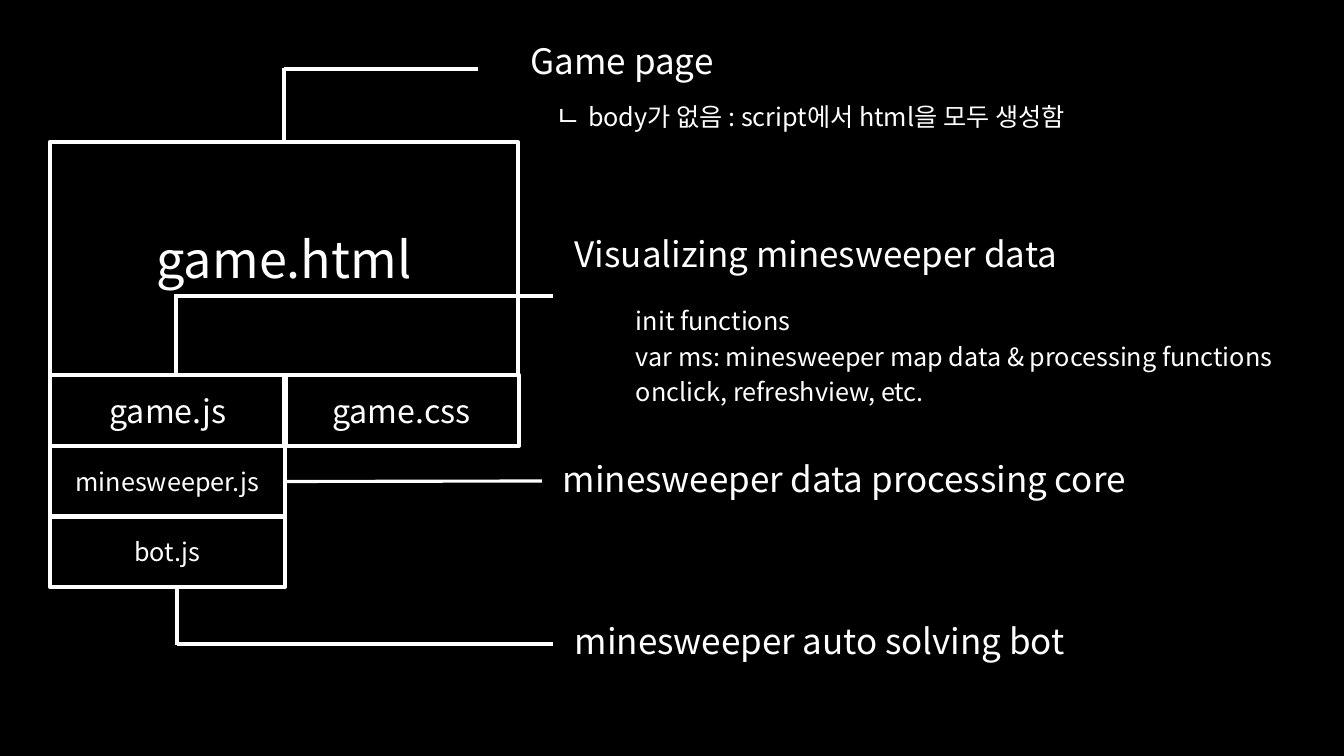
from lxml import etree
from pptx import Presentation
from pptx.dml.color import RGBColor
from pptx.enum.shapes import MSO_CONNECTOR, MSO_SHAPE
from pptx.enum.text import MSO_ANCHOR, PP_ALIGN
from pptx.oxml.ns import qn
from pptx.util import Pt

RECT = MSO_SHAPE.RECTANGLE
STRAIGHT = MSO_CONNECTOR.STRAIGHT
TOP, MIDDLE = MSO_ANCHOR.TOP, MSO_ANCHOR.MIDDLE
LEFT, CENTER = PP_ALIGN.LEFT, PP_ALIGN.CENTER

FONT = "Noto Sans CJK KR"
COLORS = {"background": "000000", "ink": "FFFFFF"}
EMU_PER_PX = 914400 / 100.8
TOP_SIDE, RIGHT_SIDE = 0, 3

# File boxes: left, top, width, height, text size
FILES = {
    "game.html": (50, 142, 468, 233, 36),
    "game.js": (50, 375, 236, 71, 23),
    "game.css": (284, 375, 235, 71, 23),
    "minesweeper.js": (50, 446, 235, 71, 18),
    "bot.js": (50, 516, 235, 71, 18),
}

# Headings: text, left, top, width, height
HEADINGS = [
    ("Visualizing minesweeper data", 565, 228, 522, 52),
    ("minesweeper data processing core", 553, 453, 611, 52),
    ("minesweeper auto solving bot", 565, 615, 528, 52),
]

# Leader lines: x1, y1, x2, y2, joined file, joined side
LEADERS = [
    (284, 142, 284, 68, "game.html", TOP_SIDE),
    (284, 69, 478, 69, None, None),
    (176, 375, 176, 294, None, None),
    (176, 296, 553, 296, None, None),
    (285, 481, 542, 481, "minesweeper.js", RIGHT_SIDE),
    (177, 587, 177, 645, None, None),
    (177, 644, 553, 644, None, None),
]

DETAILS = [
    "init functions",
    "var ms: minesweeper map data & processing functions",
    "onclick, refreshview, etc.",
]


def px(n):
    return round(n * EMU_PER_PX)


def color(name):
    return RGBColor.from_string(COLORS[name])


def add_run(p, text, size):
    r = p.add_run()
    r.text = text
    r.font.size = Pt(size)
    r.font.name = FONT
    r.font.color.rgb = color("ink")
    # The Korean letters take the same font
    etree.SubElement(r.font._element, qn("a:ea")).set("typeface", FONT)


def write(sp, paragraphs, align=LEFT, anchor=TOP, spacing=None, before=0, indent=0):
    """Fill a shape; each paragraph is a list of (text, size) runs."""
    tf = sp.text_frame
    tf.word_wrap = True
    tf.vertical_anchor = anchor
    for i, runs in enumerate(paragraphs):
        p = tf.add_paragraph() if i else tf.paragraphs[0]
        p.alignment = align
        p.line_spacing = spacing
        p.space_before = Pt(before)
        if i and indent:
            p._p.get_or_add_pPr().set("indent", str(px(indent)))
        for text, size in runs:
            add_run(p, text, size)


def add_file(s, name, x, y, w, h, size):
    sp = s.shapes.add_shape(RECT, px(x), px(y), px(w), px(h))
    sp.shadow.inherit = False
    sp.fill.background()
    sp.line.color.rgb = color("ink")
    sp.line.width = Pt(3)
    write(sp, [[(name, size)]], align=CENTER, anchor=MIDDLE)
    return sp


def add_text(s, paragraphs, x, y, w, h, **fmt):
    write(s.shapes.add_textbox(px(x), px(y), px(w), px(h)), paragraphs, **fmt)


def add_leader(s, x1, y1, x2, y2, box=None, side=None):
    c = s.shapes.add_connector(STRAIGHT, px(x1), px(y1), px(x2), px(y2))
    c.line.color.rgb = color("ink")
    c.line.width = Pt(2.25)
    etree.SubElement(c._element.spPr, qn("a:effectLst"))
    if box is not None:
        c.begin_connect(box, side)


def main():
    prs = Presentation()
    prs.slide_width, prs.slide_height = px(1344), px(756)
    s = prs.slides.add_slide(prs.slide_layouts[6])
    s.background.fill.solid()
    s.background.fill.fore_color.rgb = color("background")

    # File structure
    boxes = {name: add_file(s, name, *place) for name, place in FILES.items()}

    # Game page note
    note = [("ㄴ ", 20), ("body가 없음 : script에서 html을 모두 생성함", 18)]
    add_text(s, [[("Game page", 25)], note], 521, 14, 593, 119,
             spacing=1.5, indent=25)

    # Headings and function list
    for text, *place in HEADINGS:
        add_text(s, [[(text, 25)]], *place)
    add_text(s, [[(line, 18)] for line in DETAILS], 626, 300, 691, 113, before=4)

    # Leader lines
    for x1, y1, x2, y2, name, side in LEADERS:
        add_leader(s, x1, y1, x2, y2, boxes.get(name), side)

    prs.save("out.pptx")


if __name__ == "__main__":
    main()
